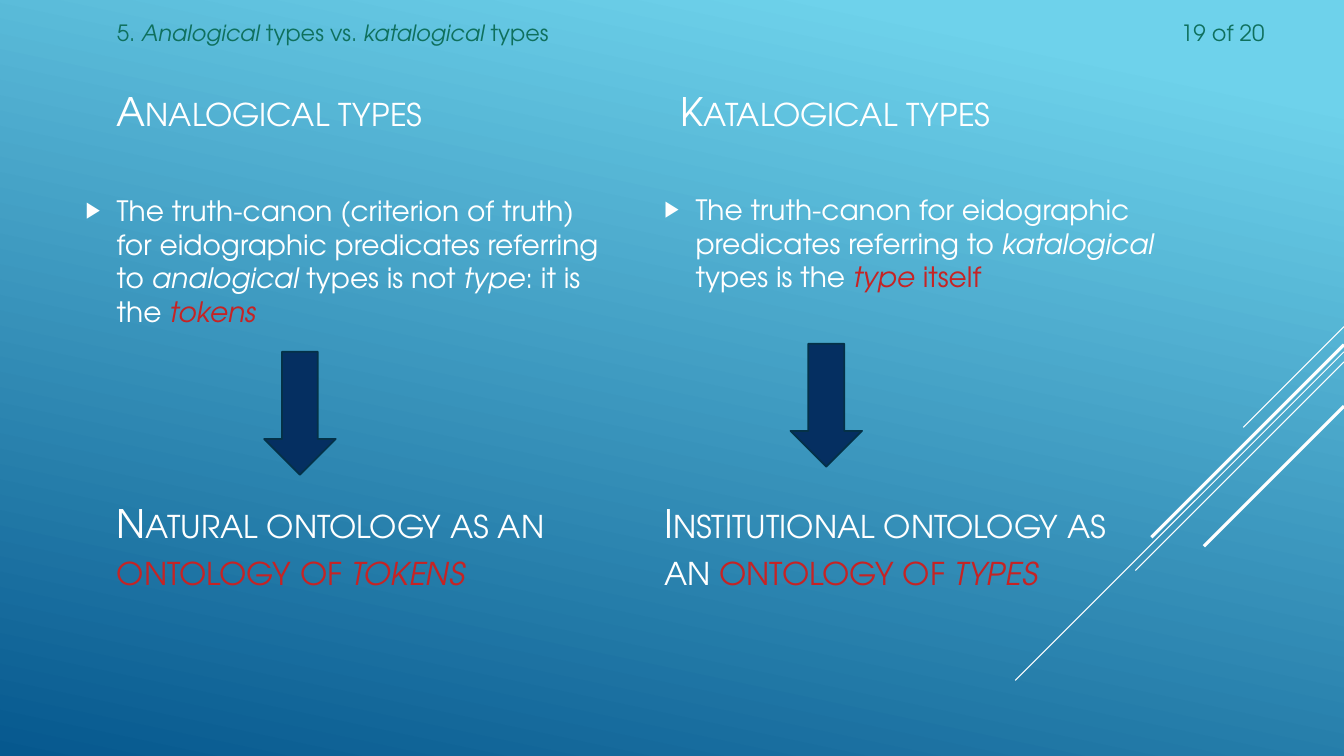
from dataclasses import dataclass
from typing import NamedTuple

from lxml import etree
from pptx import Presentation, util as u
from pptx.dml.color import RGBColor
from pptx.enum import shapes, text
from pptx.oxml.ns import qn

PX = 9144  # EMU per px, 100 px to the inch
SLIDE_W, SLIDE_H = 1333, 750


@dataclass(frozen=True)
class Theme:
    font: str = "TeX Gyre Adventor"
    white: str = "FFFFFF"
    accent: str = "C62324"
    header: str = "0F705D"
    arrow: str = "052F61"
    arrow_edge: str = "043148"
    sky: str = "6ED2EB"
    deep: str = "06588E"
    heading_pt: int = 28
    body_pt: int = 20
    header_pt: int = 16


class Box(NamedTuple):
    left: int
    top: int
    width: int
    height: int


class Words(NamedTuple):
    text: str
    italic: bool = False
    accent: bool = False


class Ray(NamedTuple):
    top: int
    reach: int
    weight: float


@dataclass(frozen=True)
class Column:
    title: str
    title_box: Box
    canon: list[Words]
    canon_box: Box
    arrow_box: Box
    ontology: list[Words]
    ontology_box: Box


THEME = Theme()

RAYS = [
    Ray(324, 100, 0.75),
    Ray(349, 326, 0.75),
    Ray(359, 207, 0.75),
    Ray(342, 191, 2.25),
    Ray(403, 139, 2.25),
]

COLUMNS = [
    Column(
        "Analogical types", Box(106, 75, 509, 63),
        [Words("The truth-canon (criterion of truth) for eidographic predicates referring to "),
         Words("analogical ", italic=True), Words("types is not "),
         Words("type", italic=True), Words(": it is the "),
         Words("tokens", italic=True, accent=True)],
        Box(75, 187, 540, 171), Box(262, 349, 71, 122),
        [Words("Natural ontology as an "), Words("ontology of ", accent=True),
         Words("tokens", italic=True, accent=True)],
        Box(106, 482, 509, 112)),
    Column(
        "Katalogical types", Box(665, 75, 510, 63),
        [Words("The truth-canon for eidographic predicates referring to "),
         Words("katalogical ", italic=True), Words("types is the "),
         Words("type ", italic=True, accent=True), Words("itself", accent=True)],
        Box(649, 186, 539, 155), Box(784, 341, 71, 122),
        [Words("Institutional ontology as an "), Words("ontology of ", accent=True),
         Words("types", italic=True, accent=True)],
        Box(649, 482, 510, 112)),
]


def emu(*lengths: int) -> list[u.Emu]:
    return [u.Emu(length * PX) for length in lengths]


def rgb(color: str) -> RGBColor:
    return RGBColor.from_string(color)


def add_bullet(paragraph) -> None:
    props = paragraph._p.get_or_add_pPr()
    indent = 31 * PX
    props.set("marL", str(indent))
    props.set("indent", str(-indent))
    color = etree.SubElement(props, qn("a:buClr"))
    etree.SubElement(color, qn("a:srgbClr"), val=THEME.white)
    etree.SubElement(props, qn("a:buSzPct"), val="80000")
    etree.SubElement(props, qn("a:buFont"), typeface="Arial")
    etree.SubElement(props, qn("a:buChar"), char="▶")


def add_text(slide, box: Box, words: list[Words], *, size: int, color: str = THEME.white,
             anchor=text.MSO_ANCHOR.TOP, align=text.PP_ALIGN.LEFT, before: float = 0,
             after: float = 0, small_caps: bool = False, bullet: bool = False) -> None:
    frame = slide.shapes.add_textbox(*emu(*box)).text_frame
    frame.word_wrap = True
    frame.vertical_anchor = anchor
    paragraph = frame.paragraphs[0]
    paragraph.alignment = align
    paragraph.space_before, paragraph.space_after = u.Pt(before), u.Pt(after)
    if bullet:
        add_bullet(paragraph)
    for part in words:
        run = paragraph.add_run()
        run.text = part.text
        run.font.name, run.font.size = THEME.font, u.Pt(size)
        run.font.italic = part.italic
        run.font.color.rgb = rgb(THEME.accent if part.accent else color)
        if small_caps:
            run._r.get_or_add_rPr().set("cap", "small")


def add_heading(slide, box: Box, words: list[Words]) -> None:
    add_text(slide, box, words, size=THEME.heading_pt, anchor=text.MSO_ANCHOR.BOTTOM,
             before=5.6, after=6, small_caps=True)


def add_ray(slide, ray: Ray) -> None:
    ends = emu(SLIDE_W, ray.top, SLIDE_W - ray.reach, ray.top + ray.reach)
    line = slide.shapes.add_connector(shapes.MSO_CONNECTOR.STRAIGHT, *ends)
    line.line.color.rgb = rgb(THEME.white)
    line.line.width = u.Pt(ray.weight)
    etree.SubElement(line._element.spPr, qn("a:effectLst"))


def add_arrow(slide, box: Box) -> None:
    arrow = slide.shapes.add_shape(shapes.MSO_SHAPE.DOWN_ARROW, *emu(*box))
    arrow.shadow.inherit = False
    arrow.fill.solid()
    arrow.fill.fore_color.rgb = rgb(THEME.arrow)
    arrow.line.color.rgb = rgb(THEME.arrow_edge)
    arrow.line.width = u.Pt(1.25)


def paint_background(slide) -> None:
    fill = slide.background.fill
    fill.gradient()
    fill.gradient_angle = 360 - 102  # counter-clockwise
    for stop, position, color in zip(fill.gradient_stops, (0.1, 1), (THEME.sky, THEME.deep)):
        stop.position = position
        stop.color.rgb = rgb(color)


def main() -> None:
    deck = Presentation()
    deck.slide_width, deck.slide_height = emu(SLIDE_W, SLIDE_H)
    slide = deck.slides.add_slide(deck.slide_layouts[6])

    # Backdrop
    paint_background(slide)
    for ray in RAYS:
        add_ray(slide, ray)

    # Header line
    section = [Words("5. "), Words("Analogical ", italic=True), Words("types vs. "),
               Words("katalogical ", italic=True), Words("types")]
    add_text(slide, Box(106, 14, 1099, 37), section, size=THEME.header_pt, color=THEME.header)
    add_text(slide, Box(1106, 14, 158, 37), [Words("19 of 20")], size=THEME.header_pt,
             color=THEME.header, align=text.PP_ALIGN.RIGHT)

    # Two compared columns
    for column in COLUMNS:
        add_heading(slide, column.title_box, [Words(column.title)])
        add_text(slide, column.canon_box, column.canon, size=THEME.body_pt, after=6, bullet=True)
        add_arrow(slide, column.arrow_box)
        add_heading(slide, column.ontology_box, column.ontology)

    deck.save("out.pptx")


if __name__ == "__main__":
    main()
